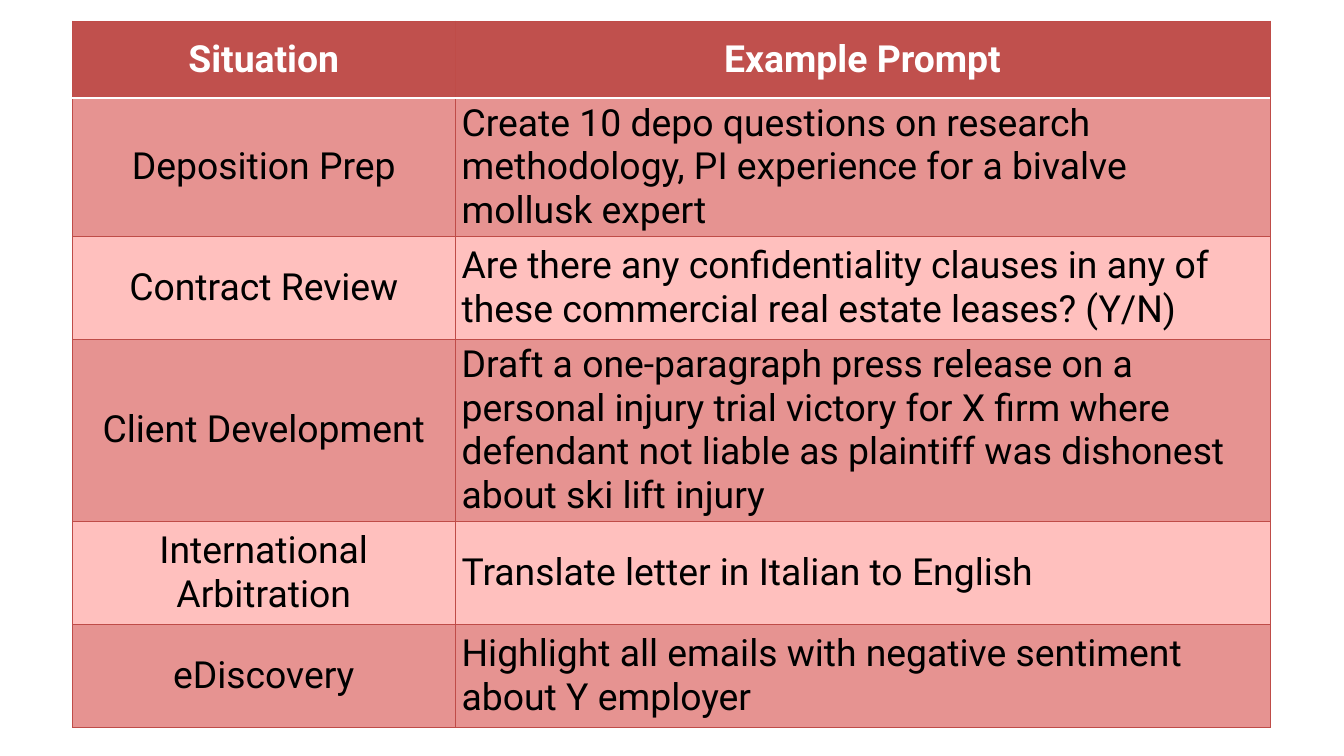
from pptx import Presentation
from pptx.dml.color import RGBColor
from pptx.enum import text
from pptx.oxml import parse_xml
from pptx.oxml.ns import nsdecls
from pptx.util import Inches, Pt

# Content: situation, example prompt, row height in inches
ROWS = [
    ("Situation", "Example Prompt", 1.15),
    ("Deposition Prep",
     "Create 10 depo questions on research methodology, PI experience "
     "for a bivalve mollusk expert", 1.54),
    ("Contract Review",
     "Are there any confidentiality clauses in any of these commercial "
     "real estate leases? (Y/N)", 1.54),
    ("Client Development",
     "Draft a one-paragraph press release on a personal injury trial victory "
     "for X firm where defendant not liable as plaintiff was dishonest "
     "about ski lift injury", 2.04),
    ("International Arbitration", "Translate letter in Italian to English", 1.54),
    ("eDiscovery",
     "Highlight all emails with negative sentiment about Y employer", 1.54),
]
COLUMN_WIDTHS = [5.69, 12.13]
LEFT, TOP, WIDTH, HEIGHT = 1.08, 0.31, 17.82, 10.64

HEADER_FILL, DARK_BAND, LIGHT_BAND = "C0504D", "E69391", "FFC0BE"
GRID = ("BF4C48", 0.75)
HEADER_RULE = ("FFFFFF", 2)


def color(hex_value):
    return RGBColor.from_string(hex_value)


def add_border(cell, side, line):
    hex_value, points = line
    cell._tc.get_or_add_tcPr().append(parse_xml(
        f'<a:ln{side} {nsdecls("a")} w="{Pt(points)}"><a:solidFill>'
        f'<a:srgbClr val="{hex_value}"/></a:solidFill></a:ln{side}>'))


def style_cell(cell, row, column):
    header = row == 0
    # Borders: the rule under the header is shared with the first body row
    add_border(cell, "L", GRID)
    add_border(cell, "R", GRID)
    add_border(cell, "T", HEADER_RULE if row == 1 else GRID)
    add_border(cell, "B", HEADER_RULE if header else GRID)
    # Fill: header, then alternating bands
    band = DARK_BAND if row % 2 else LIGHT_BAND
    cell.fill.solid()
    cell.fill.fore_color.rgb = color(HEADER_FILL if header else band)
    # Text
    cell.vertical_anchor = text.MSO_ANCHOR.MIDDLE
    para = cell.text_frame.paragraphs[0]
    centered = header or column == 0
    para.alignment = text.PP_ALIGN.CENTER if centered else text.PP_ALIGN.LEFT
    font = para.runs[0].font
    font.name, font.size, font.bold = "Roboto", Pt(40), header
    font.color.rgb = color("FFFFFF" if header else "000000")


def main():
    deck = Presentation()
    deck.slide_width, deck.slide_height = Inches(20), Inches(11.25)
    page = deck.slides.add_slide(deck.slide_layouts[6])

    # Prompt table
    frame = page.shapes.add_table(
        len(ROWS), len(COLUMN_WIDTHS),
        Inches(LEFT), Inches(TOP), Inches(WIDTH), Inches(HEIGHT))
    table = frame.table
    for column, width in zip(table.columns, COLUMN_WIDTHS):
        column.width = Inches(width)
    for row, (*entries, height) in enumerate(ROWS):
        table.rows[row].height = Inches(height)
        for column, entry in enumerate(entries):
            cell = table.cell(row, column)
            cell.text_frame.text = entry
            style_cell(cell, row, column)
    frame.height = Inches(HEIGHT)

    deck.save("out.pptx")


if __name__ == "__main__":
    main()
